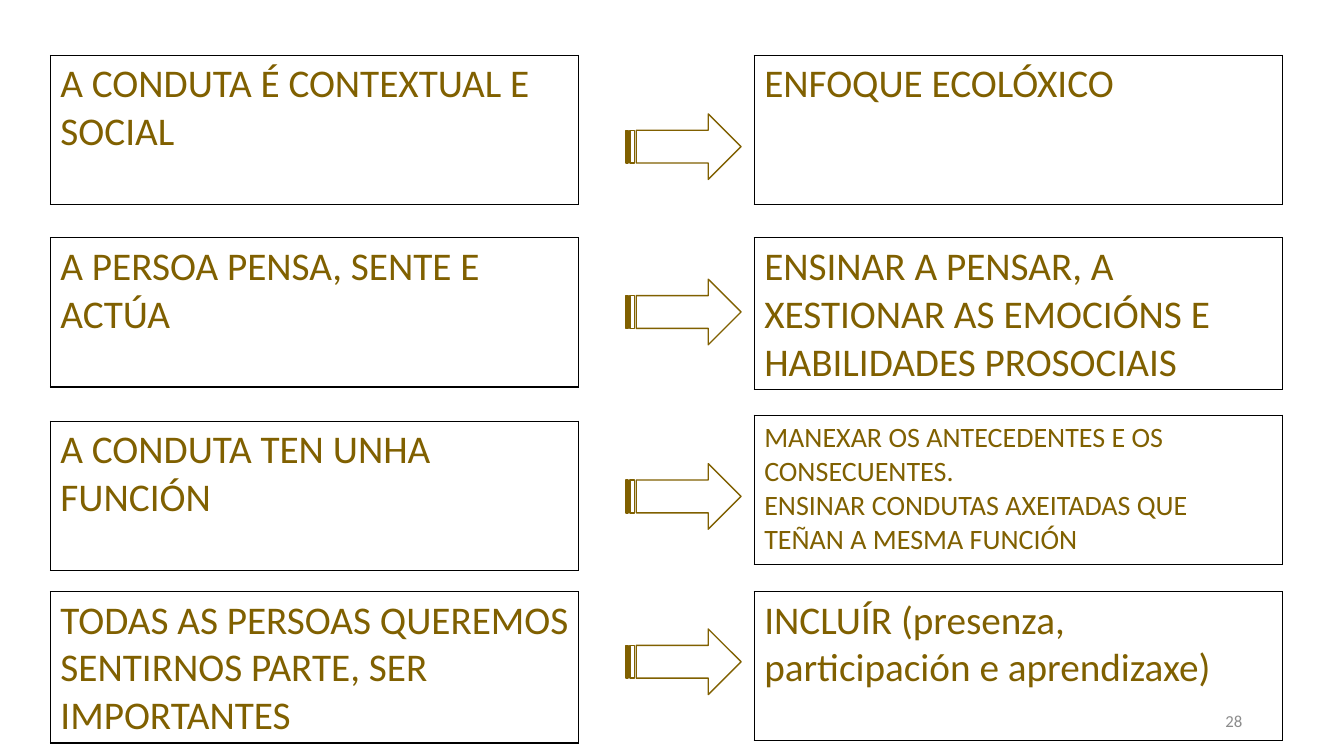
from lxml import etree
from pptx import Presentation, util as u
from pptx.dml.color import RGBColor
from pptx.enum import shapes, text
from pptx.oxml.ns import qn

OCHRE = RGBColor(0x80, 0x60, 0x00)
GREY = RGBColor(0x8C, 0x8C, 0x8C)
WHITE = RGBColor(0xFF, 0xFF, 0xFF)
BORDER = RGBColor(0, 0, 0)
FONT = "Calibri"
PAGE_NUMBER = "28"

PRINCIPLES = [
    (55, "A CONDUTA É CONTEXTUAL E SOCIAL"),
    (236, "A PERSOA PENSA, SENTE E ACTÚA"),
    (418, "A CONDUTA TEN UNHA FUNCIÓN"),
    (587, "TODAS AS PERSOAS QUEREMOS SENTIRNOS PARTE, SER IMPORTANTES"),
]
RESPONSES = [
    (55, 28, ["ENFOQUE ECOLÓXICO"]),
    (236, 28, ["ENSINAR A PENSAR, A XESTIONAR AS EMOCIÓNS E HABILIDADES PROSOCIAIS"]),
    (412, 20, ["MANEXAR OS ANTECEDENTES E OS CONSECUENTES.",
               "ENSINAR CONDUTAS AXEITADAS QUE TEÑAN A MESMA FUNCIÓN"]),
    (587, 28, ["INCLUÍR (presenza, participación e aprendizaxe)"]),
]
ARROW_TOPS = [113, 277, 460, 624]
LEFT_COLUMN, ARROW_COLUMN, RIGHT_COLUMN = 50, 621, 748
BOX_WIDTH, BOX_HEIGHT = 524, 148
ARROW_WIDTH, ARROW_HEIGHT = 114, 65
PX_PER_INCH = 100


def px(*lengths):
    return [u.Inches(length / PX_PER_INCH) for length in lengths]


def style_text(paragraph, size, color):
    paragraph.font.name = FONT
    paragraph.font.size = u.Pt(size)
    paragraph.font.color.rgb = color


def add_borders(cell):
    properties = cell._tc.get_or_add_tcPr()
    for index, side in enumerate(("a:lnL", "a:lnR", "a:lnT", "a:lnB")):
        line = etree.Element(qn(side), w=str(u.Pt(1)))
        fill = etree.SubElement(line, qn("a:solidFill"))
        etree.SubElement(fill, qn("a:srgbClr"), val=str(BORDER))
        properties.insert(index, line)


def add_box(slide, left, top, size, lines):
    table = slide.shapes.add_table(1, 1, *px(left, top, BOX_WIDTH, BOX_HEIGHT)).table
    table.first_row = table.horz_banding = False
    cell = table.cell(0, 0)
    cell.fill.background()
    add_borders(cell)
    cell.text = "\n".join(lines)
    for paragraph in cell.text_frame.paragraphs:
        style_text(paragraph, size, OCHRE)


def add_arrow(slide, top):
    arrow = slide.shapes.add_shape(
        shapes.MSO_SHAPE.STRIPED_RIGHT_ARROW,
        *px(ARROW_COLUMN, top, ARROW_WIDTH, ARROW_HEIGHT))
    arrow.shadow.inherit = False
    arrow.fill.solid()
    arrow.fill.fore_color.rgb = WHITE
    arrow.line.color.rgb = OCHRE
    arrow.line.width = u.Pt(1)


def add_page_number(slide):
    frame = slide.shapes.add_textbox(*px(942, 695, 300, 40)).text_frame
    frame.word_wrap = True
    frame.vertical_anchor = text.MSO_ANCHOR.MIDDLE
    paragraph = frame.paragraphs[0]
    paragraph.text = PAGE_NUMBER
    paragraph.alignment = text.PP_ALIGN.RIGHT
    style_text(paragraph, 12, GREY)


def main():
    presentation = Presentation()
    presentation.slide_width, presentation.slide_height = px(1333, 750)
    slide = presentation.slides.add_slide(presentation.slide_layouts[6])
    add_page_number(slide)
    for top, principle in PRINCIPLES:
        add_box(slide, LEFT_COLUMN, top, 28, [principle])
    for top, size, lines in RESPONSES:
        add_box(slide, RIGHT_COLUMN, top, size, lines)
    for top in ARROW_TOPS:
        add_arrow(slide, top)
    presentation.save("out.pptx")


if __name__ == "__main__":
    main()
